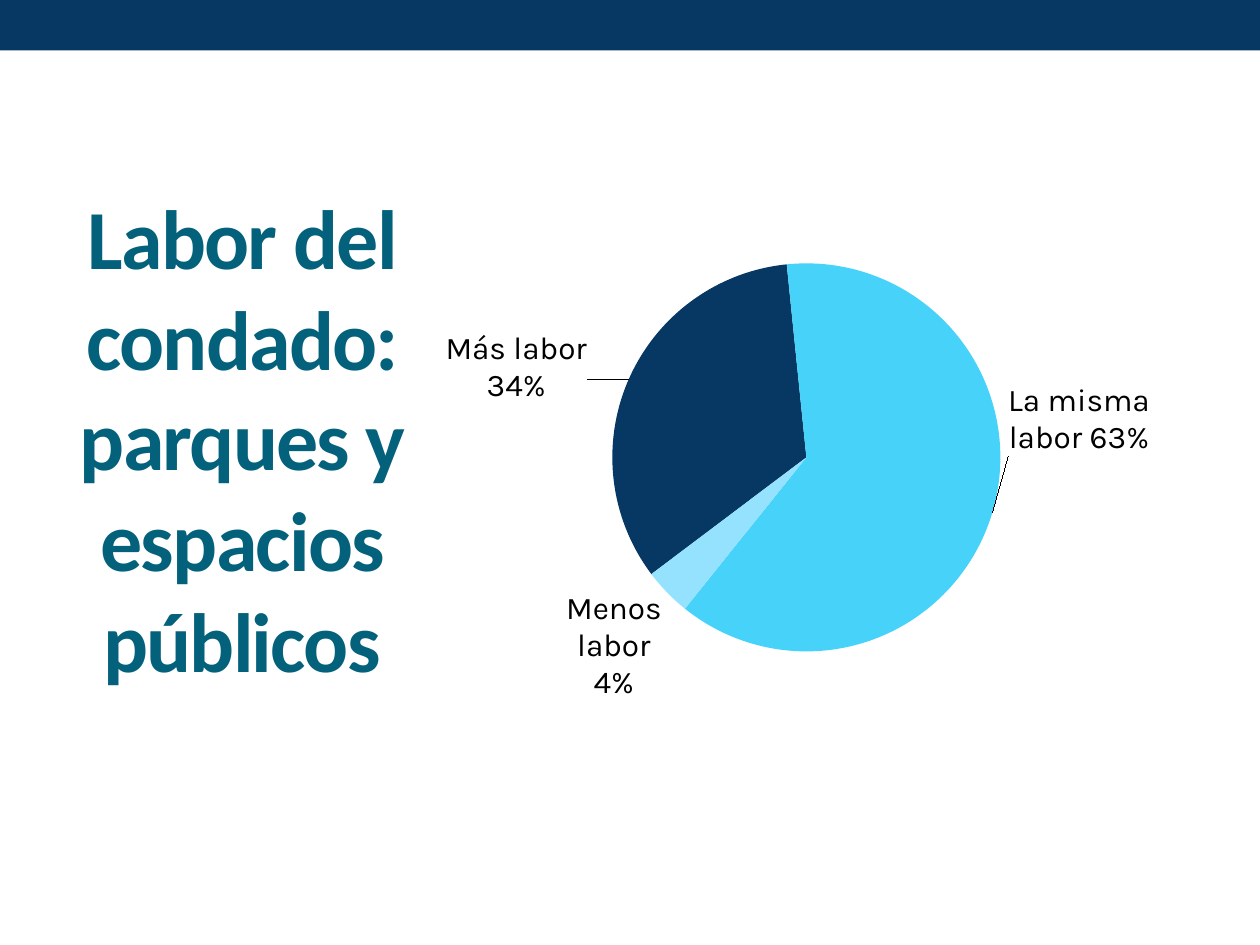
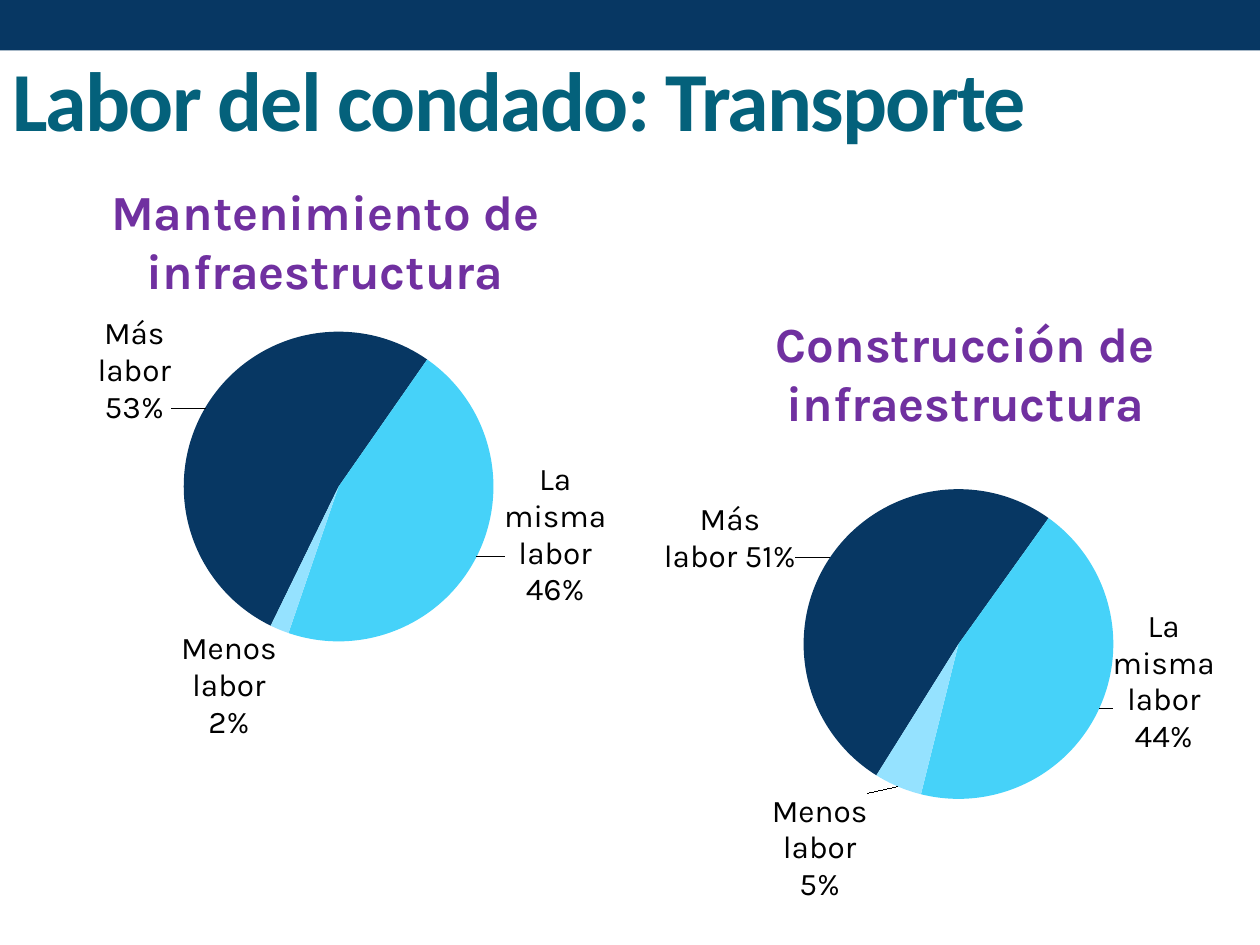
from pptx import Presentation
from pptx.chart.data import CategoryChartData
from pptx.dml.color import RGBColor
from pptx.enum.chart import XL_CHART_TYPE as ChartType, XL_LABEL_POSITION as LabelPos
from pptx.enum.shapes import MSO_SHAPE as Shape
from pptx.enum.text import MSO_ANCHOR as Anchor, MSO_AUTO_SIZE as AutoSize, PP_ALIGN as Align
from pptx.oxml import parse_xml
from pptx.oxml.ns import nsdecls
from pptx.util import Inches, Pt

COLORS = {
    "band": "073763",
    "title": "04617B",
    "heading": "7030A0",
    "label": "000000",
    "more": "073763",
    "same": "46D2F9",
    "less": "95E2FF",
}
SLICES = ("more", "same", "less")
CATEGORIES = ("More effort", "Same effort", "Less effort")
LABELS = ("Más labor {:.0%}", "La misma labor {:.0%}", "Menos labor\n{:.0%}")
PLOT_BOX = {"x": 0.267, "y": 0.098, "w": 0.447, "h": 0.701}


def color(name):
    return RGBColor.from_string(COLORS[name])


def inches(box):
    return [Inches(v) for v in box]


def style_font(font, name, size, color_name, bold):
    font.name, font.size, font.bold = name, Pt(size), bold
    font.color.rgb = color(color_name)


def write_centered(sp, text, name, size, color_name):
    tf = sp.text_frame
    tf.word_wrap = True
    tf.auto_size = AutoSize.NONE
    tf.vertical_anchor = Anchor.TOP
    tf.text = text
    p = tf.paragraphs[0]
    p.alignment = Align.CENTER
    r = p.runs[0]
    style_font(r.font, name, size, color_name, True)
    return r


def add_titled_slide(prs, title, box):
    """Add a slide with the top band and its title in the given box."""
    s = prs.slides.add_slide(prs.slide_layouts[5])
    band = s.shapes.add_shape(Shape.RECTANGLE, 0, 0, prs.slide_width, Inches(0.4))
    band.shadow.inherit = False
    band.fill.solid()
    band.fill.fore_color.rgb = color("band")
    band.line.fill.background()
    sp = s.shapes.title
    sp.left, sp.top, sp.width, sp.height = inches(box)
    r = write_centered(sp, title, "Calibri", 48, "title")
    r.font._element.set("spc", "-100")
    return s


def add_heading(s, text, box):
    write_centered(s.shapes.add_textbox(*inches(box)), text, "Karla", 28, "heading")


def manual_layout(values, inner=False):
    """Build a layout: an inner plot box, or a label's shift from its usual place."""
    modes = '<c:layoutTarget val="inner"/><c:xMode val="edge"/><c:yMode val="edge"/>'
    sides = "".join(f'<c:{k} val="{v}"/>' for k, v in values.items())
    return parse_xml(f'<c:layout {nsdecls("c")}><c:manualLayout>'
                     f'{modes if inner else ""}{sides}</c:manualLayout></c:layout>')


def place_pie(chart, start):
    """Fix the plot box and the angle of the first slice."""
    area = chart.element.xpath(".//c:plotArea")[0]
    for old in area.xpath("./c:layout | .//c:firstSliceAng"):
        old.getparent().remove(old)
    area.insert(0, manual_layout(PLOT_BOX, inner=True))
    pie = area.xpath("./c:pieChart")[0]
    pie.append(parse_xml(f'<c:firstSliceAng {nsdecls("c")} val="{start}"/>'))


def label_slice(chart, i, text, shift):
    label = chart.plots[0].series[0].points[i].data_label
    tf = label.text_frame
    tf.text = text
    for p in tf.paragraphs:
        for r in p.runs:
            style_font(r.font, "Karla", 18, "label", False)
    label.position = LabelPos.OUTSIDE_END
    element = chart.element.xpath(f'.//c:dLbl[c:idx/@val="{i}"]')[0]
    element.insert(1, manual_layout(dict(zip("xy", shift))))
    for flag in element.xpath("./c:showCatName"):
        flag.set("val", "1")


def add_effort_pie(s, box, values, start, shifts):
    data = CategoryChartData(number_format="0%")
    data.categories = CATEGORIES
    data.add_series("Series 1", values)
    chart = s.shapes.add_chart(ChartType.PIE, *inches(box), data).chart
    chart.has_title = chart.has_legend = False
    style_font(chart.font, "Karla", 18, "label", True)
    plot = chart.plots[0]
    plot.vary_by_categories = True
    series = plot.series[0]
    labels = series.data_labels
    labels.show_value = labels.show_category_name = True
    labels.number_format, labels.number_format_is_linked = "0%", False
    labels.position = LabelPos.OUTSIDE_END
    for i, (name, text, value, shift) in enumerate(zip(SLICES, LABELS, values, shifts)):
        fill = series.points[i].format.fill
        fill.solid()
        fill.fore_color.rgb = color(name)
        label_slice(chart, i, text.format(value), shift)
    place_pie(chart, start)


def add_parks_slide(prs):
    s = add_titled_slide(prs, "Labor del condado: parques y espacios públicos",
                         (0.42, 1.42, 3, 5.42))
    add_effort_pie(s, (3.02, 1.16, 6.89, 5.51), (0.34, 0.63, 0.04), 233,
                   ((-0.04, 0.04), (0.01, -0.19), (0, -0.01)))


def add_transport_slide(prs):
    s = add_titled_slide(prs, "Labor del condado: Transporte", (-0.01, 0.33, 8.26, 1.58))
    pie_size, heading_size = (5.5, 4.33), (3.92, 1.03)
    add_effort_pie(s, (-0.01, 1.92, *pie_size), (0.53, 0.46, 0.02), 206,
                   ((-0.04, 0.04), (0.03, -0.18), (0, -0.01)))
    add_effort_pie(s, (4.91, 3.17, *pie_size), (0.51, 0.44, 0.05), 212,
                   ((-0.04, 0.04), (0.01, -0.19), (-0.04, 0)))
    add_heading(s, "Mantenimiento de infraestructura", (0.62, 1.39, *heading_size))
    add_heading(s, "Construcción de infraestructura", (5.7, 2.44, *heading_size))


def main():
    prs = Presentation()
    prs.slide_width, prs.slide_height = Inches(10), Inches(7.5)
    add_parks_slide(prs)
    add_transport_slide(prs)
    prs.save("out.pptx")


if __name__ == "__main__":
    main()
